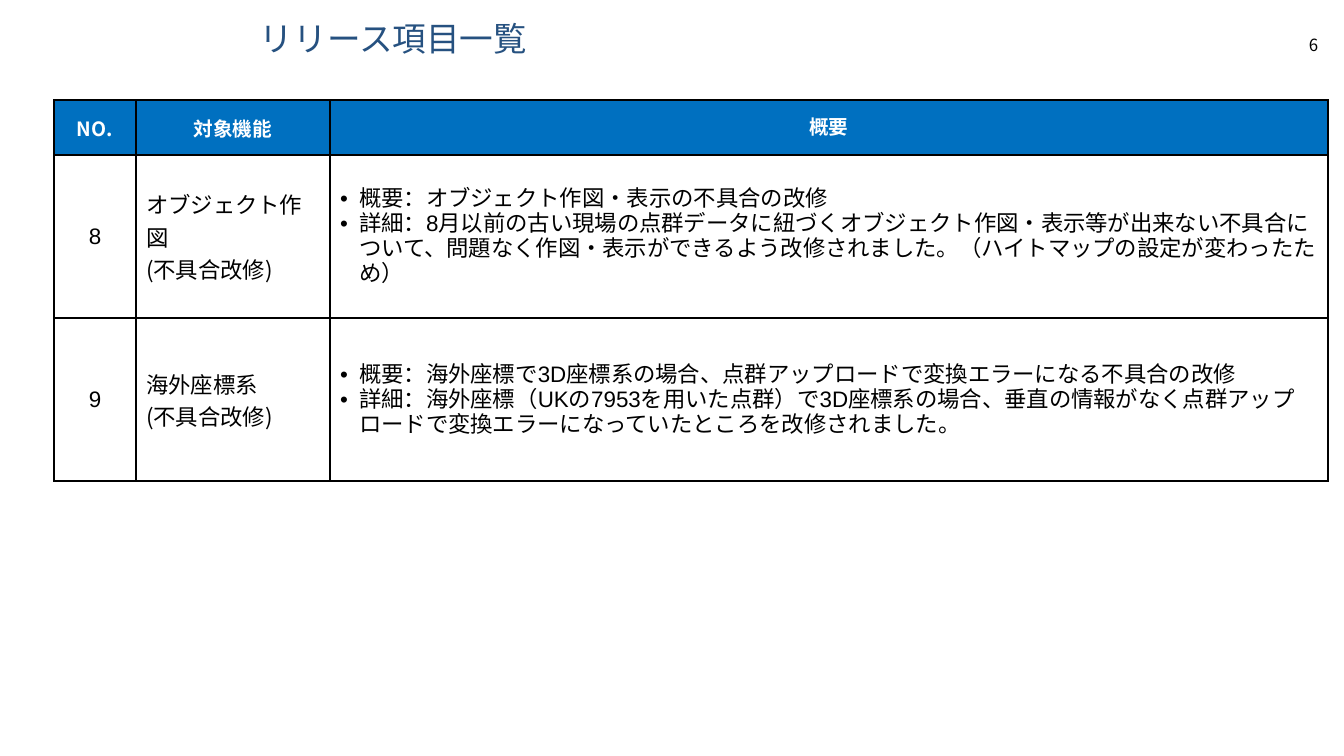
import pptx
import pptx.util
import pptx.dml.color
import pptx.enum.text
import pptx.oxml
import pptx.oxml.ns
from lxml import etree

PX = 914400 / 100.8
BLUE = pptx.dml.color.RGBColor(0x00, 0x70, 0xC0)
NAVY = pptx.dml.color.RGBColor(0x26, 0x51, 0x80)
BLACK = pptx.dml.color.RGBColor(0, 0, 0)
WHITE = pptx.dml.color.RGBColor(0xFF, 0xFF, 0xFF)
NOTO = "Noto Sans CJK JP"
ARIAL = "Arial"
ALIGN = pptx.enum.text.PP_ALIGN
MIDDLE = pptx.enum.text.MSO_ANCHOR.MIDDLE
qn = pptx.oxml.ns.qn


def px(n):
    return pptx.util.Emu(round(n * PX))


def add_run(p, text, size, font, color, bold=False):
    r = p.add_run()
    r.text = text
    r.font.size = pptx.util.Pt(size)
    r.font.name = font
    r.font.bold = bold
    r.font.color.rgb = color
    etree.SubElement(r.font._element, qn("a:ea"), typeface=font)


prs = pptx.Presentation()
prs.slide_width, prs.slide_height = px(1344), px(756)
s = prs.slides.add_slide(prs.slide_layouts[6])

tf = s.shapes.add_textbox(px(1258), px(30), px(70), px(30)).text_frame
tf.word_wrap = True
tf.paragraphs[0].alignment = ALIGN.RIGHT
add_run(tf.paragraphs[0], "6", 12, NOTO, BLACK)

tf = s.shapes.add_textbox(px(250), px(20), px(899), px(42)).text_frame
tf.word_wrap = True
tf.vertical_anchor = MIDDLE
tf.paragraphs[0].line_spacing = 0.9
add_run(tf.paragraphs[0], "リリース項目一覧", 24, ARIAL, NAVY)

rows = [
    [["NO."], ["対象機能"], ["概要"]],
    [["8"], ["オブジェクト作図", "(不具合改修)"], [
        "概要：オブジェクト作図・表示の不具合の改修",
        "詳細：8月以前の古い現場の点群データに紐づくオブジェクト作図・表示等が出来ない不具合について、"
        "問題なく作図・表示ができるよう改修されました。（ハイトマップの設定が変わったため）"]],
    [["9"], ["海外座標系", "(不具合改修)"], [
        "概要：海外座標で3D座標系の場合、点群アップロードで変換エラーになる不具合の改修",
        "詳細：海外座標（UKの7953を用いた点群）で3D座標系の場合、"
        "垂直の情報がなく点群アップロードで変換エラーになっていたところを改修されました。"]],
]
widths = [82, 194, 998]
heights = [55, 163, 163]
table = s.shapes.add_table(3, 3, px(54), px(100), px(sum(widths)), px(sum(heights))).table
for col, w in zip(table.columns, widths):
    col.width = px(w)
for row, h in zip(table.rows, heights):
    row.height = px(h)

for i, row in enumerate(rows):
    for j, lines in enumerate(row):
        header = i == 0
        cell = table.cell(i, j)
        cell.vertical_anchor = MIDDLE
        tcPr = cell._tc.get_or_add_tcPr()
        for side in ("a:lnL", "a:lnR", "a:lnT", "a:lnB"):
            ln = etree.SubElement(tcPr, qn(side), w="12700")
            fill = etree.SubElement(ln, qn("a:solidFill"))
            etree.SubElement(fill, qn("a:srgbClr"), val=str(BLACK))
        cell.fill.solid()
        cell.fill.fore_color.rgb = BLUE if header else WHITE
        tf = cell.text_frame
        for k, line in enumerate(lines):
            p = tf.add_paragraph() if k else tf.paragraphs[0]
            p.alignment = ALIGN.CENTER if header or j == 0 else ALIGN.LEFT
            if j == 2 and not header:
                pPr = p._p.get_or_add_pPr()
                pPr.set("marL", str(px(19)))
                pPr.set("indent", str(-px(19)))
                etree.SubElement(pPr, qn("a:buFont"), typeface=ARIAL)
                etree.SubElement(pPr, qn("a:buChar"), char="•")
            font = NOTO if j == 1 or header and j == 0 else ARIAL
            add_run(p, line, 14 if header else 16, font, WHITE if header else BLACK, header)

prs.save("out.pptx")
